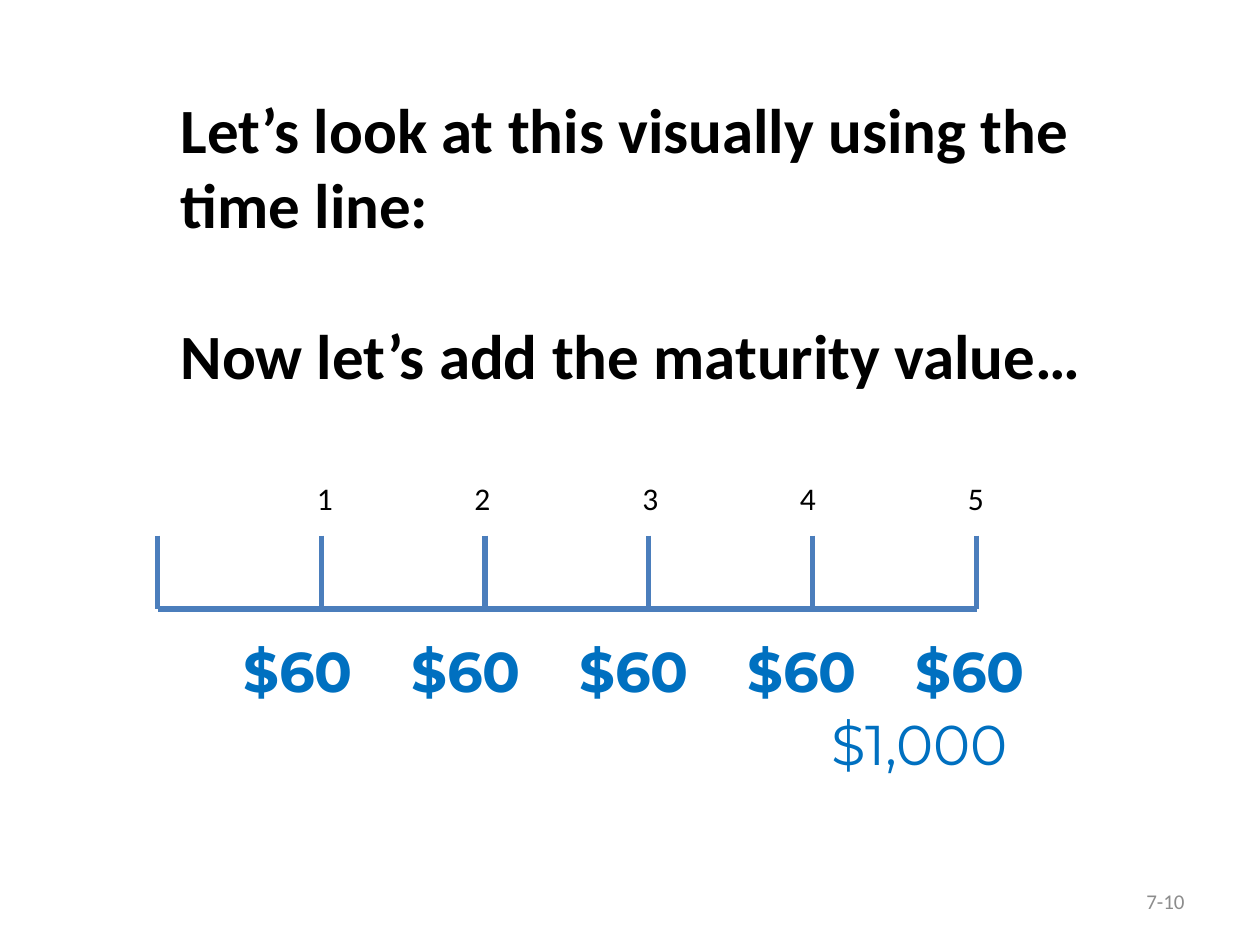
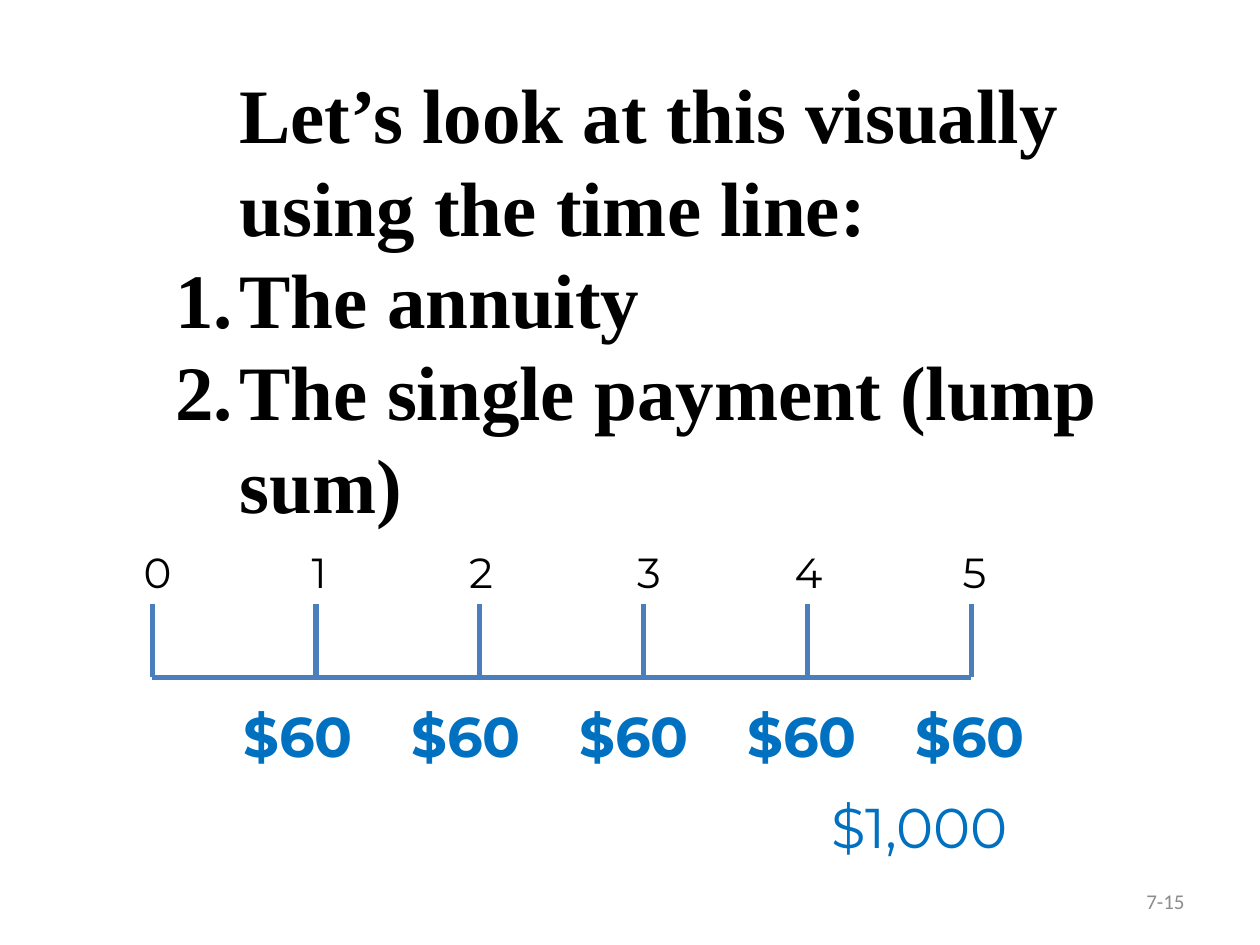
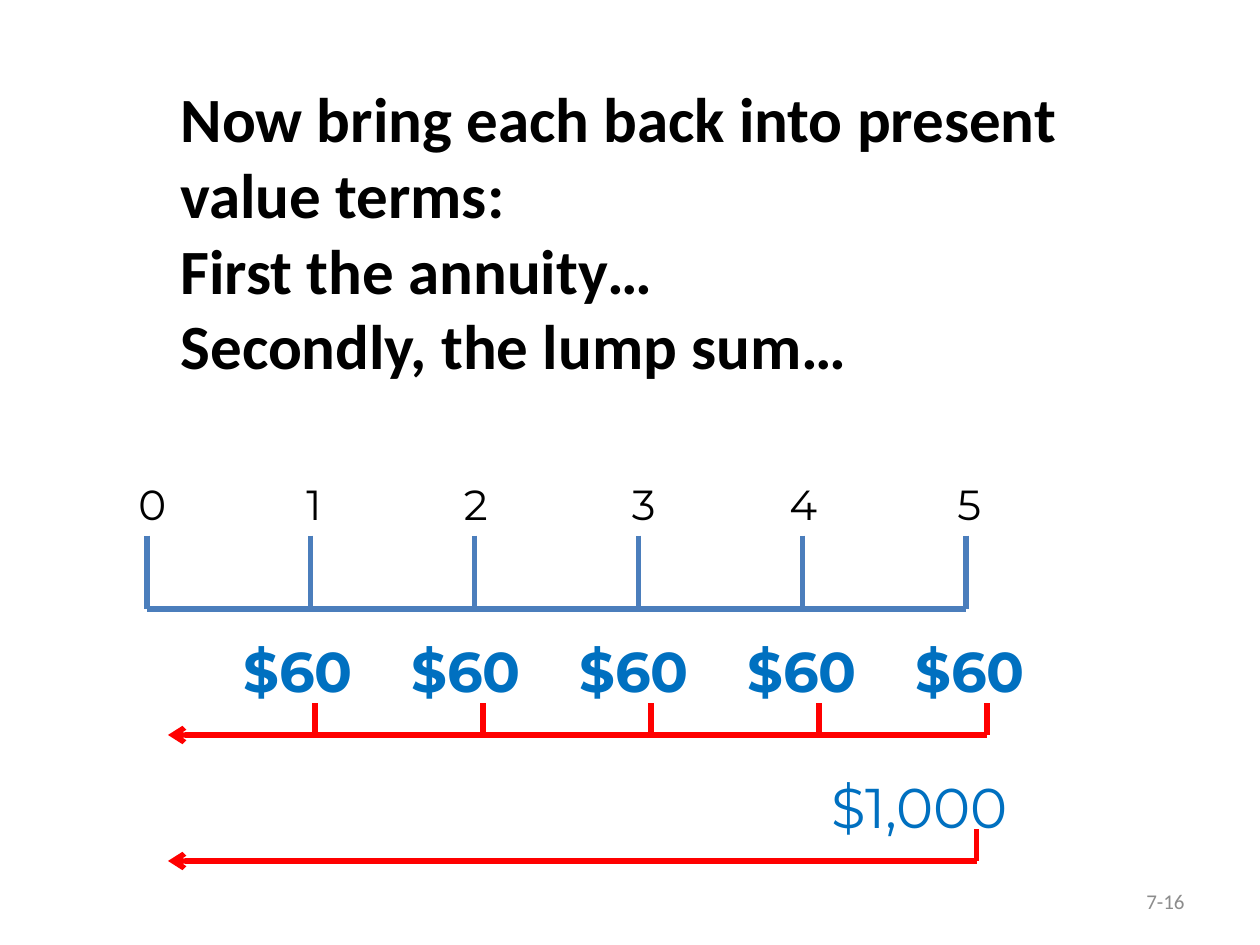
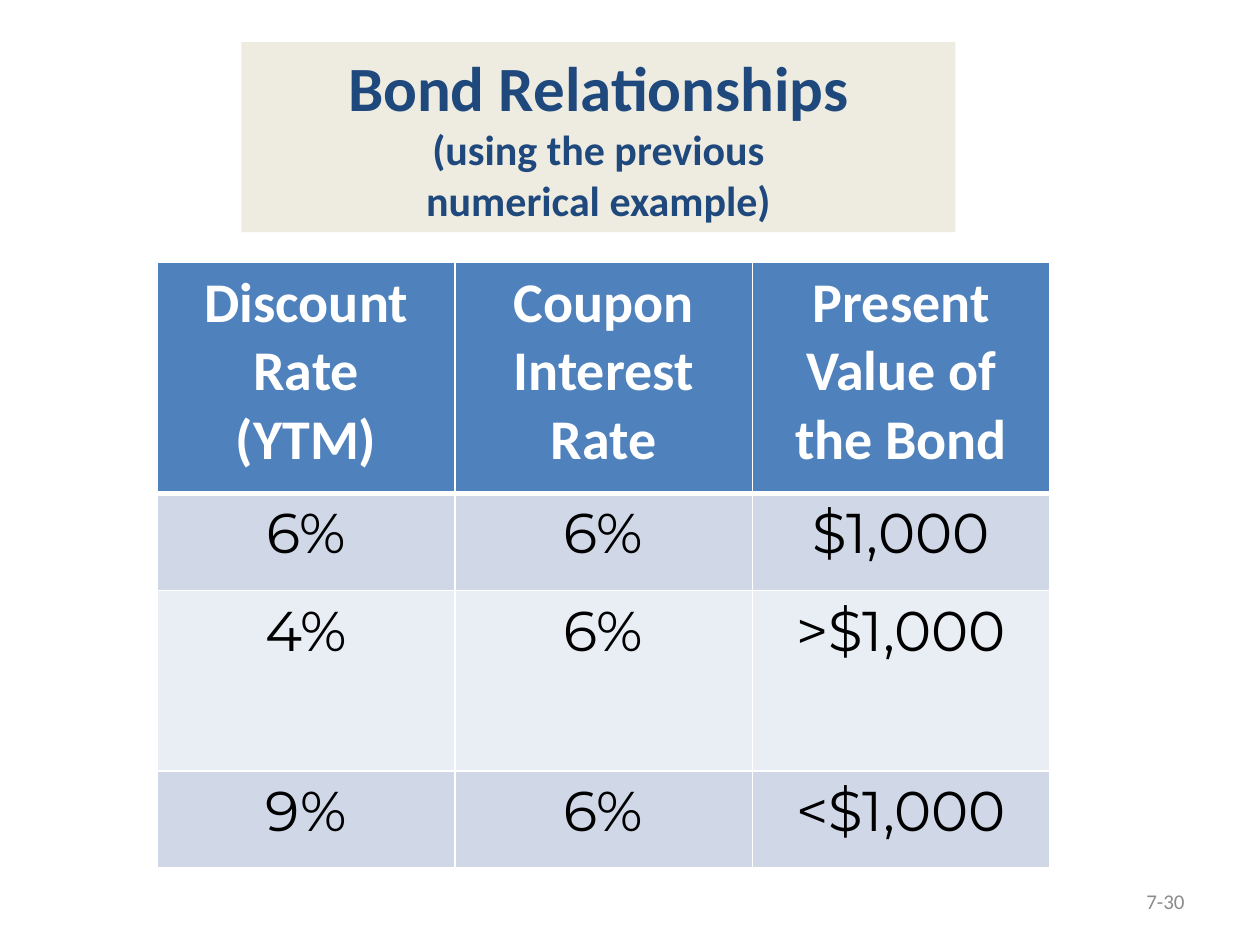
from collections import namedtuple
from dataclasses import dataclass

from lxml.etree import SubElement
from pptx import Presentation
from pptx.dml.color import RGBColor
from pptx.enum.shapes import MSO_CONNECTOR
from pptx.enum.text import MSO_ANCHOR, MSO_AUTO_SIZE, PP_ALIGN
from pptx.oxml.ns import qn
from pptx.util import Inches, Pt

Style = namedtuple("Style", "font size color bold")


@dataclass(frozen=True)
class Theme:
    axis: str = "4B7EBC"
    flow: str = "FF0000"
    sand: str = "EEECE1"
    head: str = "4F81BD"
    bands: tuple = ("D0D8E8", "E9EDF4")
    rule: str = "FFFFFF"
    stroke: int = 3
    title: Style = Style("Calibri", 36, "000000", True)
    serif: Style = Style("Times New Roman", 44, "000000", True)
    banner: Style = Style("Calibri", 36, "1F497D", True)
    subtitle: Style = Style("Calibri", 24, "1F497D", True)
    small: Style = Style("Calibri", 18, "000000", False)
    large: Style = Style("Montserrat", 24, "000000", False)
    coupon: Style = Style("Montserrat", 32, "0070C0", True)
    value: Style = Style("Montserrat", 32, "0070C0", False)
    column: Style = Style("Calibri", 32, "FFFFFF", True)
    entry: Style = Style("Montserrat", 32, "000000", False)
    footer: Style = Style("Calibri", 12, "8C8C8C", False)


THEME = Theme()
COLS, ROWS = 120, 90
YEARS = 5
TICK_GAP = 15.6
TICK_RISE = 7
PAY_LEFT, PAY_GAP = 22, 16
FLOW_LEFT, FLOW_RISE = 16, 3
LABELS = [(-2, 5), (14, 3.1), (29, 3.7), (45, 3.7), (60, 4.3), (76, 5)]


def grid(*cells):
    return [Inches(cell / 12) for cell in cells]


def color(code):
    return RGBColor.from_string(code)


def format_line(para, style, align=PP_ALIGN.LEFT):
    para.alignment = align
    font = para.font
    font.name, font.size, font.bold = style.font, Pt(style.size), style.bold
    font.color.rgb = color(style.color)


def write(frame, lines, styles, align=PP_ALIGN.LEFT):
    frame.text = "\n".join(lines)
    for para, style in zip(frame.paragraphs, styles):
        format_line(para, style, align)


def add_text(shapes, box, text, style, align=PP_ALIGN.LEFT):
    frame = shapes.add_textbox(*grid(*box)).text_frame
    frame.word_wrap = True
    write(frame, [text], [style], align)
    return frame


def add_line(shapes, start, end, shade, arrow=False):
    line = shapes.add_connector(MSO_CONNECTOR.STRAIGHT, *grid(*start, *end))
    line.line.color.rgb = color(shade)
    line.line.width = Pt(THEME.stroke)
    props = line.element.spPr
    if arrow:
        SubElement(props.find(qn("a:ln")), qn("a:tailEnd"), type="arrow")
    SubElement(props, qn("a:effectLst"))


def add_slide(deck, number, box, lines, styles, align=PP_ALIGN.LEFT):
    slide = deck.slides.add_slide(deck.slide_layouts[5])
    title = slide.shapes.title
    title.left, title.top, title.width, title.height = grid(*box)
    frame = title.text_frame
    frame.word_wrap = True
    frame.auto_size = MSO_AUTO_SIZE.NONE
    frame.vertical_anchor = MSO_ANCHOR.TOP
    write(frame, lines, styles, align)
    foot = add_text(slide.shapes, (86, 83.4, 28, 4.8), number,
                    THEME.footer, PP_ALIGN.RIGHT)
    foot.vertical_anchor = MSO_ANCHOR.MIDDLE
    return slide


def indent_list(paras):
    for spot, para in enumerate(paras):
        props = para._p.get_or_add_pPr()
        props.set("marL", str(Inches(0.51)))
        props.set("indent", str(Inches(-0.51 if spot else 0)))
        if spot:
            mark = SubElement(props, qn("a:buAutoNum"), type="arabicPeriod")
            props.insert(0, mark)


def add_axis(slide, left, base, style, first=0):
    shapes = slide.shapes.add_group_shape().shapes
    top = base - TICK_RISE
    add_line(shapes, (left, base), (left + YEARS * TICK_GAP, base), THEME.axis)
    for year, (shift, width) in enumerate(LABELS):
        tick = left + year * TICK_GAP
        add_line(shapes, (tick, top), (tick, base), THEME.axis)
        if year >= first:
            box = (left + shift, top - 6, width, style.size / 4)
            add_text(shapes, box, str(year), style)


def add_cash(slide, top, final):
    shapes = slide.shapes.add_group_shape().shapes
    for year in range(YEARS):
        box = (PAY_LEFT + year * PAY_GAP, top, 14, 7.7)
        add_text(shapes, box, "$60", THEME.coupon)
    add_text(slide.shapes, (78, final, 27, 7.7), "$1,000", THEME.value)


def add_flow(slide, base, ticks):
    shapes = slide.shapes.add_group_shape().shapes
    add_line(shapes, (ticks[-1], base), (FLOW_LEFT, base), THEME.flow, True)
    for tick in ticks:
        add_line(shapes, (tick, base - FLOW_RISE), (tick, base), THEME.flow)


def set_border(cell, bottom):
    props = cell._tc.get_or_add_tcPr()
    widths = {"a:lnL": 1, "a:lnR": 1, "a:lnT": 1, "a:lnB": bottom}
    for spot, (side, width) in enumerate(widths.items()):
        edge = SubElement(props, qn(side), w=str(Pt(width)))
        fill = SubElement(edge, qn("a:solidFill"))
        SubElement(fill, qn("a:srgbClr"), val=THEME.rule)
        props.insert(spot, edge)


def add_grid(slide, box, heights, rows):
    frame = slide.shapes.add_table(len(rows), len(rows[0]), *grid(*box))
    table = frame.table
    table.horz_banding = False
    for r, (height, row) in enumerate(zip(heights, rows)):
        table.rows[r].height = grid(height)[0]
        style = THEME.entry if r else THEME.column
        shade = THEME.bands[(r - 1) % 2] if r else THEME.head
        for c, text in enumerate(row):
            cell = table.cell(r, c)
            lines = text.split("\n")
            write(cell.text_frame, lines, [style] * len(lines), PP_ALIGN.CENTER)
            cell.fill.solid()
            cell.fill.fore_color.rgb = color(shade)
            set_border(cell, 1 if r else 3)


def build_value(deck):
    lines = ["Let’s look at this visually using the time line:",
             "Now let’s add the maturity value…"]
    slide = add_slide(deck, "7-10", (16, 8, 91, 30.2), lines,
                      [THEME.title] * 2)
    slide.shapes.title.text_frame.paragraphs[1].space_before = Pt(43)
    add_axis(slide, 15, 58, THEME.small, first=1)
    add_cash(slide, 60, 67)


def build_parts(deck):
    lines = ["Let’s look at this visually using the time line:",
             "The annuity", "The single payment (lump sum)"]
    slide = add_slide(deck, "7-15", (15.5, 5.75, 91, 45.1), lines,
                      [THEME.serif] * 3)
    indent_list(slide.shapes.title.text_frame.paragraphs)
    add_cash(slide, 66.25, 74.9)
    add_axis(slide, 14.5, 64.5, THEME.large)


def build_present(deck):
    lines = ["Now bring each back into present value terms:",
             "First the annuity…", "Secondly, the lump sum…"]
    slide = add_slide(deck, "7-16", (16, 7, 91, 30.2), lines,
                      [THEME.title] * 3)
    add_cash(slide, 60, 73)
    add_flow(slide, 82, [93])
    add_flow(slide, 70, [30 + year * PAY_GAP for year in range(YEARS)])
    add_axis(slide, 14, 58, THEME.large)


def build_bonds(deck):
    lines = ["Bond Relationships", "(using the previous", "numerical example)"]
    styles = [THEME.banner, THEME.subtitle, THEME.subtitle]
    slide = add_slide(deck, "7-30", (23, 4, 68, 18.1), lines, styles,
                      PP_ALIGN.CENTER)
    fill = slide.shapes.title.fill
    fill.solid()
    fill.fore_color.rgb = color(THEME.sand)
    rows = [("Discount Rate\n(YTM)", "Coupon Interest Rate",
             "Present Value of the Bond"),
            ("6%", "6%", "$1,000"),
            ("4%", "6%", ">$1,000"),
            ("9%", "6%", "<$1,000")]
    add_grid(slide, (15, 25, 85, 57.7), (22, 9.25, 17.2, 9.25), rows)


def main():
    deck = Presentation()
    deck.slide_width, deck.slide_height = grid(COLS, ROWS)
    for build in (build_value, build_parts, build_present, build_bonds):
        build(deck)
    deck.save("out.pptx")


if __name__ == "__main__":
    main()
